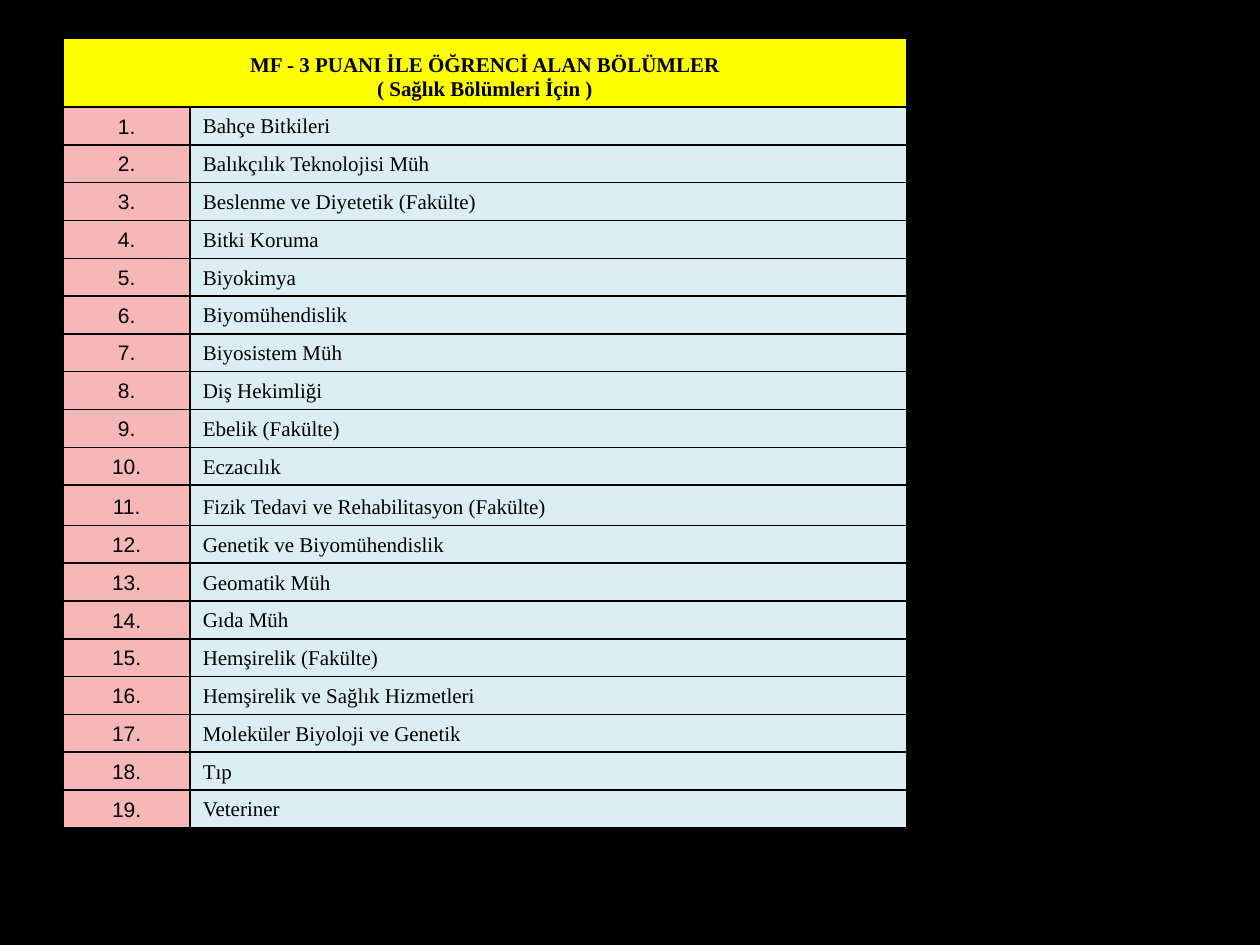
from copy import deepcopy
from dataclasses import dataclass

from lxml import etree
from pptx import Presentation
from pptx import util as u
from pptx.dml import color
from pptx.enum import text
from pptx.oxml import ns

PX = 9144


@dataclass(frozen=True)
class Theme:
    background: str = "000000"
    ink: str = "000000"
    header: str = "FFFF00"
    number: str = "F8B7B7"
    department: str = "DBEEF4"
    serif: str = "Times New Roman"
    sans: str = "Arial"
    size: int = 12
    border: int = 1


@dataclass(frozen=True)
class CellStyle:
    fill: str
    font: str
    align: text.PP_ALIGN
    bold: bool = False


THEME = Theme()
HEADER = CellStyle(THEME.header, THEME.serif, text.PP_ALIGN.CENTER, True)
NUMBER = CellStyle(THEME.number, THEME.sans, text.PP_ALIGN.CENTER)
DEPARTMENT = CellStyle(THEME.department, THEME.serif, text.PP_ALIGN.LEFT)

TITLE = "MF - 3 PUANI İLE ÖĞRENCİ ALAN BÖLÜMLER\v( Sağlık Bölümleri İçin )"
DEPARTMENTS = [
    "Bahçe Bitkileri",
    "Balıkçılık Teknolojisi Müh",
    "Beslenme ve Diyetetik (Fakülte)",
    "Bitki Koruma",
    "Biyokimya",
    "Biyomühendislik",
    "Biyosistem Müh",
    "Diş Hekimliği",
    "Ebelik (Fakülte)",
    "Eczacılık",
    "Fizik Tedavi ve Rehabilitasyon (Fakülte)",
    "Genetik ve Biyomühendislik",
    "Geomatik Müh",
    "Gıda Müh",
    "Hemşirelik (Fakülte)",
    "Hemşirelik ve Sağlık Hizmetleri",
    "Moleküler Biyoloji ve Genetik",
    "Tıp",
    "Veteriner",
]
LEFT, TOP = 50, 30
COLUMNS = [101, 569]
HEADER_HEIGHT, ROW_HEIGHT = 55, 30
TALL_ROWS = {11: 32}


def px(value: int) -> u.Emu:
    return u.Emu(value * PX)


def rgb(value: str) -> color.RGBColor:
    return color.RGBColor.from_string(value)


def set_borders(cell) -> None:
    properties = cell._tc.get_or_add_tcPr()
    for index, side in enumerate(("a:lnL", "a:lnR", "a:lnT", "a:lnB")):
        line = etree.Element(ns.qn(side), w=str(u.Pt(THEME.border)))
        fill = etree.SubElement(line, ns.qn("a:solidFill"))
        etree.SubElement(fill, ns.qn("a:srgbClr"), val=THEME.ink)
        properties.insert(index, line)


def write_cell(cell, words: str, style: CellStyle) -> None:
    cell.fill.solid()
    cell.fill.fore_color.rgb = rgb(style.fill)
    cell.vertical_anchor = text.MSO_ANCHOR.BOTTOM
    paragraph = cell.text_frame.paragraphs[0]
    paragraph.text = words
    paragraph.alignment = style.align
    font_values = {"name": style.font, "size": u.Pt(THEME.size), "bold": style.bold}
    for run in paragraph.runs:
        for name, value in font_values.items():
            setattr(run.font, name, value)
        run.font.color.rgb = rgb(THEME.ink)
    for line_break in paragraph._p.findall(ns.qn("a:br")):
        line_break.append(deepcopy(paragraph.runs[0]._r.rPr))


def draw_table(slide) -> None:
    heights = [HEADER_HEIGHT] + [
        TALL_ROWS.get(number, ROW_HEIGHT) for number in range(1, len(DEPARTMENTS) + 1)
    ]
    table = slide.shapes.add_table(
        len(heights), len(COLUMNS), px(LEFT), px(TOP), px(sum(COLUMNS)), px(sum(heights))
    ).table
    table.horz_banding = False
    for column, width in zip(table.columns, COLUMNS):
        column.width = px(width)
    for row, height in zip(table.rows, heights):
        row.height = px(height)
    table.cell(0, 0).merge(table.cell(0, 1))
    write_cell(table.cell(0, 0), TITLE, HEADER)
    for number, department in enumerate(DEPARTMENTS, 1):
        write_cell(table.cell(number, 0), f"{number}.", NUMBER)
        write_cell(table.cell(number, 1), department, DEPARTMENT)
    for cell in table.iter_cells():
        set_borders(cell)


def main() -> None:
    presentation = Presentation()
    presentation.slide_width, presentation.slide_height = px(1000), px(750)
    slide = presentation.slides.add_slide(presentation.slide_layouts[6])
    slide.background.fill.solid()
    slide.background.fill.fore_color.rgb = rgb(THEME.background)
    draw_table(slide)
    presentation.save("out.pptx")


if __name__ == "__main__":
    main()
